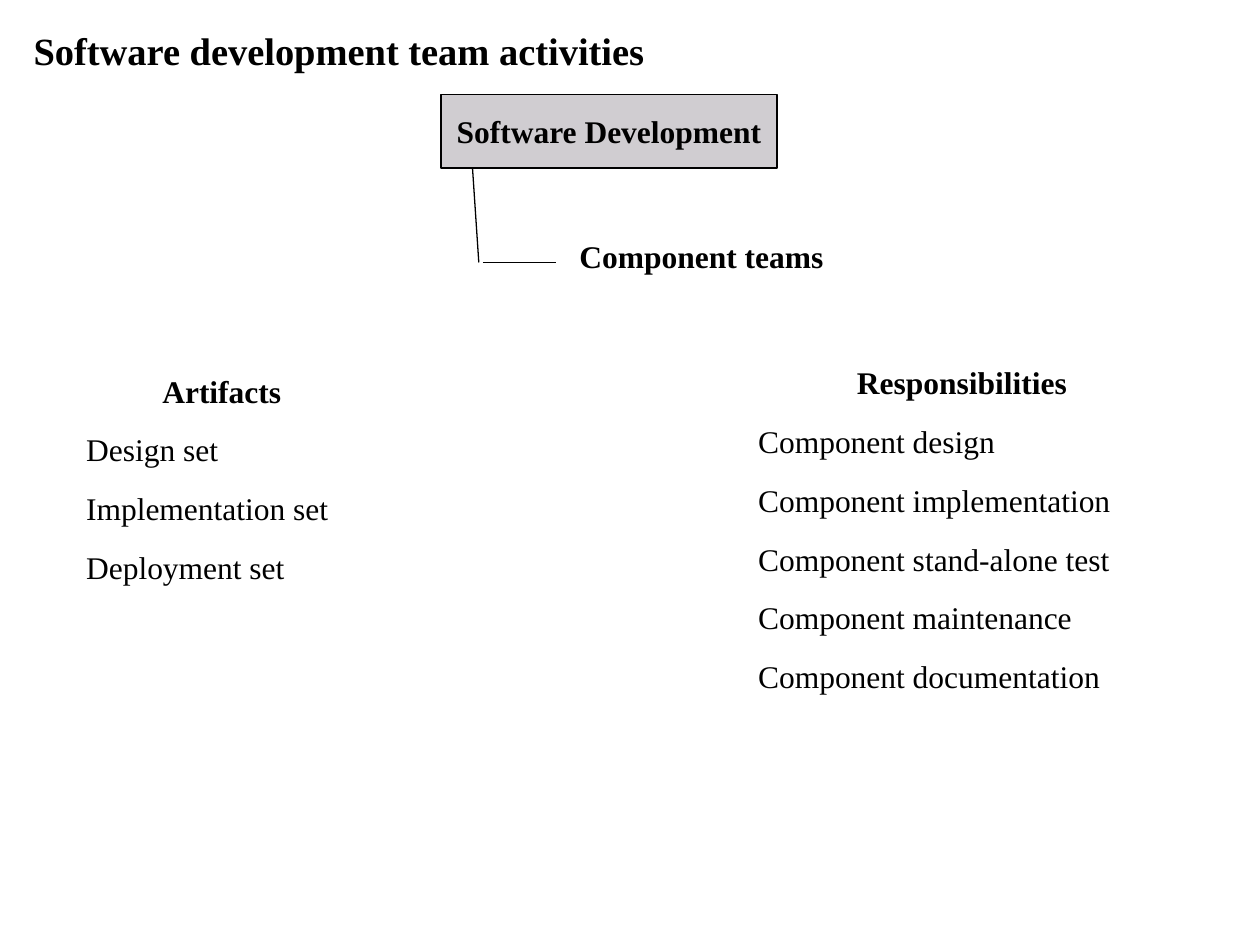
from lxml import etree
from pptx import Presentation, util as u
from pptx.dml.color import RGBColor
from pptx.enum import shapes, text
from pptx.oxml.ns import qn

FONT = "Times New Roman"
INK = "000000"
GREY = "D0CDD1"
# Grid of twelfths of an inch: 120 columns by 90 rows
COLS, ROWS = 120, 90

deck = Presentation()
deck.slide_width, deck.slide_height = u.Inches(10), u.Inches(7.5)
CELL = deck.slide_width / COLS


def grid(*vals):
    return [u.Emu(round(v * CELL)) for v in vals]


def color(code):
    return RGBColor.from_string(code)


def place(shape, box):
    shape.left, shape.top, shape.width, shape.height = grid(*box)


def write(par, words, size=18, bold=False, align=text.PP_ALIGN.LEFT, gap=0):
    par.alignment = align
    par.space_before = u.Pt(gap)
    run = par.add_run()
    run.text = words
    font = run.font
    font.name, font.size, font.bold = FONT, u.Pt(size), bold
    font.color.rgb = color(INK)


def plain(par):
    """Take the bullet and hanging indent off a list line."""
    props = par._p.get_or_add_pPr()
    props.set("marL", "0")
    props.set("indent", "0")
    etree.SubElement(props, qn("a:buNone"))


def title(slide, box):
    head = slide.shapes.title
    place(head, box)
    frame = head.text_frame
    frame.vertical_anchor = text.MSO_ANCHOR.TOP
    frame.auto_size = text.MSO_AUTO_SIZE.NONE
    write(frame.paragraphs[0], "Software development team activities", 22, True)


def line(slide, *ends):
    link = slide.shapes.add_connector(shapes.MSO_CONNECTOR.STRAIGHT, *grid(*ends))
    link.line.color.rgb = color(INK)
    link.line.width = u.Pt(0.75)
    etree.SubElement(link._element.spPr, qn("a:effectLst"))


def chart(slide, box):
    """Team box with a branch down to its component teams."""
    left, top, wide, high = box
    team = slide.shapes.add_shape(
        shapes.MSO_SHAPE.RECTANGLE, *grid(left, top, wide, high))
    team.shadow.inherit = False
    team.fill.solid()
    team.fill.fore_color.rgb = color(GREY)
    team.line.color.rgb = color(INK)
    team.line.width = u.Pt(0.75)
    frame = team.text_frame
    frame.word_wrap = False
    frame.vertical_anchor = text.MSO_ANCHOR.MIDDLE
    write(frame.paragraphs[0], "Software Development", bold=True,
          align=text.PP_ALIGN.CENTER)

    # Branch
    foot = top + high
    line(slide, left + 3, foot, left + 3.6, foot + 9)
    line(slide, left + 4, foot + 9, left + 11, foot + 9)
    note = slide.shapes.add_textbox(*grid(left + 12, foot + 6, 33, 4.8))
    note.text_frame.word_wrap = True
    write(note.text_frame.paragraphs[0], "Component teams", bold=True)


def roster(body, box, head, items):
    """Centred heading over a plain list."""
    place(body, box)
    frame = body.text_frame
    frame.word_wrap = True
    frame.auto_size = text.MSO_AUTO_SIZE.SHAPE_TO_FIT_TEXT
    par = frame.paragraphs[0]
    write(par, head, bold=True, align=text.PP_ALIGN.CENTER, gap=12)
    plain(par)
    for item in items:
        par = frame.add_paragraph()
        write(par, item, gap=12)
        plain(par)


def main():
    slide = deck.slides.add_slide(deck.slide_layouts[3])
    title(slide, (2, 2, COLS - 4, ROWS - 4))
    chart(slide, (42, 9, 32, 7))
    roster(slide.placeholders[1], (7, 34.8, 29, 21.8), "Artifacts ",
           ["Design set", "Implementation set", "Deployment set"])
    tasks = ["design", "implementation", "stand-alone test",
             "maintenance", "documentation"]
    roster(slide.placeholders[2], (71, 34, 42, 33.1), "Responsibilities ",
           [f"Component {task}" for task in tasks])
    deck.save("out.pptx")


if __name__ == "__main__":
    main()
